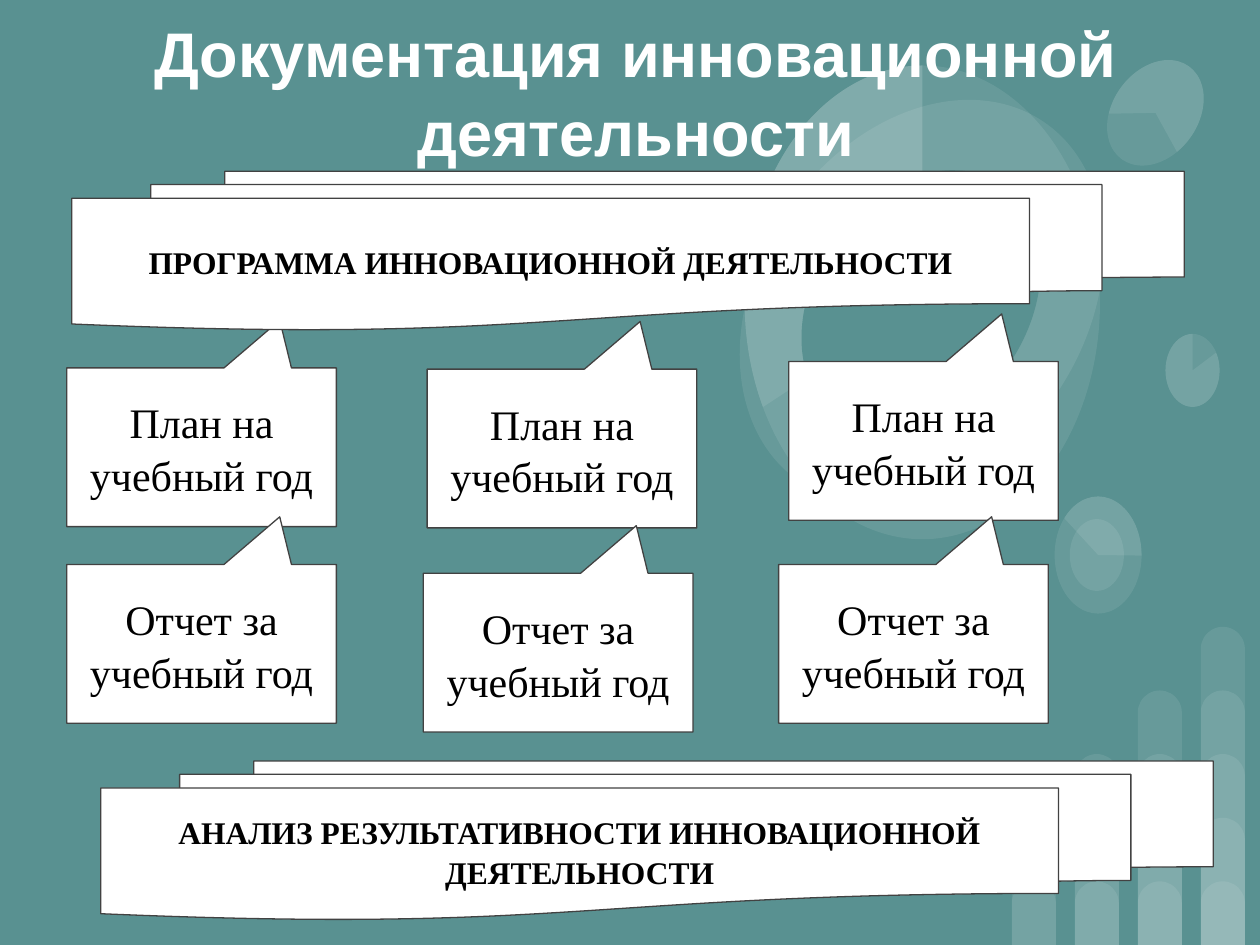
from lxml import etree
from pptx import Presentation
from pptx.dml.color import RGBColor
from pptx.enum import shapes, text
from pptx.oxml import ns
from pptx.util import Inches, Pt

KIND = shapes.MSO_SHAPE
THEME = {
    "ground": "599191", "paper": "FFFFFF", "line": "424242", "ink": "000000",
    "title": {"name": "Arial", "size": Pt(36), "bold": True},
    "banner": {"name": "Times New Roman", "size": Pt(18), "bold": True},
    "callout": {"name": "Times New Roman", "size": Pt(24), "bold": False},
    "line_spacing": 1.05, "veil_percent": 9,
}

TITLE = "Документация инновационной деятельности"
PLAN, REPORT = "План на учебный год", "Отчет за учебный год"
CALLOUT_SIZE = (2.14, 1.26)
BANNER_SIZE = (8.83, 1.26)
PLANS = [(0.53, 2.92), (3.39, 2.93), (6.26, 2.87)]
REPORTS = [(0.53, 4.48), (3.36, 4.55), (6.18, 4.48)]
PROGRAMME = ("ПРОГРАММА ИННОВАЦИОННОЙ ДЕЯТЕЛЬНОСТИ", (0.57, 1.36))
ANALYSIS = ("АНАЛИЗ РЕЗУЛЬТАТИВНОСТИ ИННОВАЦИОННОЙ ДЕЯТЕЛЬНОСТИ", (0.8, 6.04))

# Background pies: box, rotation, then one entry per layer
# (None is a full disc, a pair is the start and end of a pie)
DISC = None
PIES = [
    ((9.25, 2.65, 0.43, 0.58), 0, [DISC, (193.77, 162)]),
    ((7.08, 5.08, 0.35, 0.47), 196.2, [DISC, (193.77, 162)]),
    ((8.25, 4.06, 0.93, 0.69), 90, [DISC, (82.45, 162.46)]),
    ((8.42, 4.19, 0.57, 0.43), 90, [DISC]),
    ((8.83, 0.44, 0.68, 0.91), 215.9, [DISC, (193.77, 123.14)]),
    ((5.91, 0.52, 2.82, 3.76), 0, [DISC]),
    ((6.02, 0.67, 2.59, 3.45), 34.1, [DISC]),
    ((5.91, 0.52, 2.82, 3.76), 0, [(88.01, 162)]),
]
RING_HOLE = (6.46, 1.27, 1.7, 2.27)
RING_SLICE = ((5.91, 0.52, 2.82, 3.76), 0, [(125.54, 162)])
BARS = {"left": 8.03, "pitch": 0.5, "width": 0.35, "step": 0.505, "columns": 4}


def colour(value):
    return RGBColor.from_string(value)


def add_shape(page, kind, box, fill, rotation=0, adjust=()):
    shape = page.shapes.add_shape(kind, *map(Inches, box))
    shape.shadow.inherit = False
    shape.rotation = rotation
    shape.fill.solid()
    shape.fill.fore_color.rgb = colour(fill)
    shape.line.fill.background()
    for index, value in enumerate(adjust):
        shape.adjustments[index] = value
    return shape


def add_veil(page, *args):
    """Add a nearly transparent white shape."""
    shape = add_shape(page, *args)
    fill = shape.element.spPr.find(ns.qn("a:solidFill"))
    alpha = etree.SubElement(fill[0], ns.qn("a:alpha"))
    alpha.set("val", str(THEME["veil_percent"] * 1000))


def add_bars(page):
    """Each column overlays bars of one step, two steps and so on."""
    for column in range(BARS["columns"]):
        left = BARS["left"] + column * BARS["pitch"]
        for count in range(1, column + 3):
            height = count * BARS["step"]
            box = (left, 7.5 - height, BARS["width"], height)
            add_veil(page, KIND.ROUND_2_SAME_RECTANGLE, box, THEME["paper"], 0, (0.5, 0))


def add_pie(page, box, rotation, layers):
    for angles in layers:
        kind = KIND.PIE if angles else KIND.OVAL
        add_veil(page, kind, box, THEME["paper"], rotation, angles or ())


def write(shape, words, style, ink, inset):
    frame = shape.text_frame
    settings = {
        "word_wrap": True, "auto_size": text.MSO_AUTO_SIZE.NONE,
        "vertical_anchor": text.MSO_ANCHOR.MIDDLE,
        "margin_left": Inches(0.1), "margin_right": Inches(0.1),
        "margin_top": Inches(inset), "margin_bottom": Inches(inset),
    }
    for name, value in settings.items():
        setattr(frame, name, value)
    para = frame.paragraphs[0]
    para.alignment = text.PP_ALIGN.CENTER
    para.line_spacing = THEME["line_spacing"]
    span = para.add_run()
    span.text = words
    for name, value in THEME[style].items():
        setattr(span.font, name, value)
    span.font.color.rgb = colour(ink)


def add_card(page, kind, place, size, words, style, adjust=()):
    shape = add_shape(page, kind, place + size, THEME["paper"], 0, adjust)
    shape.line.color.rgb = colour(THEME["line"])
    shape.line.width = Pt(0.75)
    write(shape, words, style, THEME["ink"], 0.1)


def add_callouts(page, places, words):
    for place in places:
        add_card(page, KIND.RECTANGULAR_CALLOUT, place, CALLOUT_SIZE, words,
                 "callout", (0.29, -0.8))


def add_banner(page, words, place):
    add_card(page, KIND.FLOWCHART_MULTIDOCUMENT, place, BANNER_SIZE, words, "banner")


def place_title(page):
    title = page.shapes.title
    title.left, title.top, title.width, title.height = map(Inches, (0.4, -0.11, 9.29, 1.65))
    write(title, TITLE, "title", THEME["paper"], 0.05)
    title.element.getparent().append(title.element)  # above the background


def main():
    deck = Presentation()
    deck.slide_width, deck.slide_height = Inches(10), Inches(7.5)
    page = deck.slides.add_slide(deck.slide_layouts[5])
    page.background.fill.solid()
    page.background.fill.fore_color.rgb = colour(THEME["ground"])

    add_bars(page)
    for pie in PIES:
        add_pie(page, *pie)
    add_shape(page, KIND.OVAL, RING_HOLE, THEME["ground"], 34.1)
    add_pie(page, *RING_SLICE)

    place_title(page)
    add_callouts(page, PLANS, PLAN)
    add_banner(page, *PROGRAMME)
    add_callouts(page, REPORTS, REPORT)
    add_banner(page, *ANALYSIS)
    deck.save("out.pptx")


if __name__ == "__main__":
    main()
